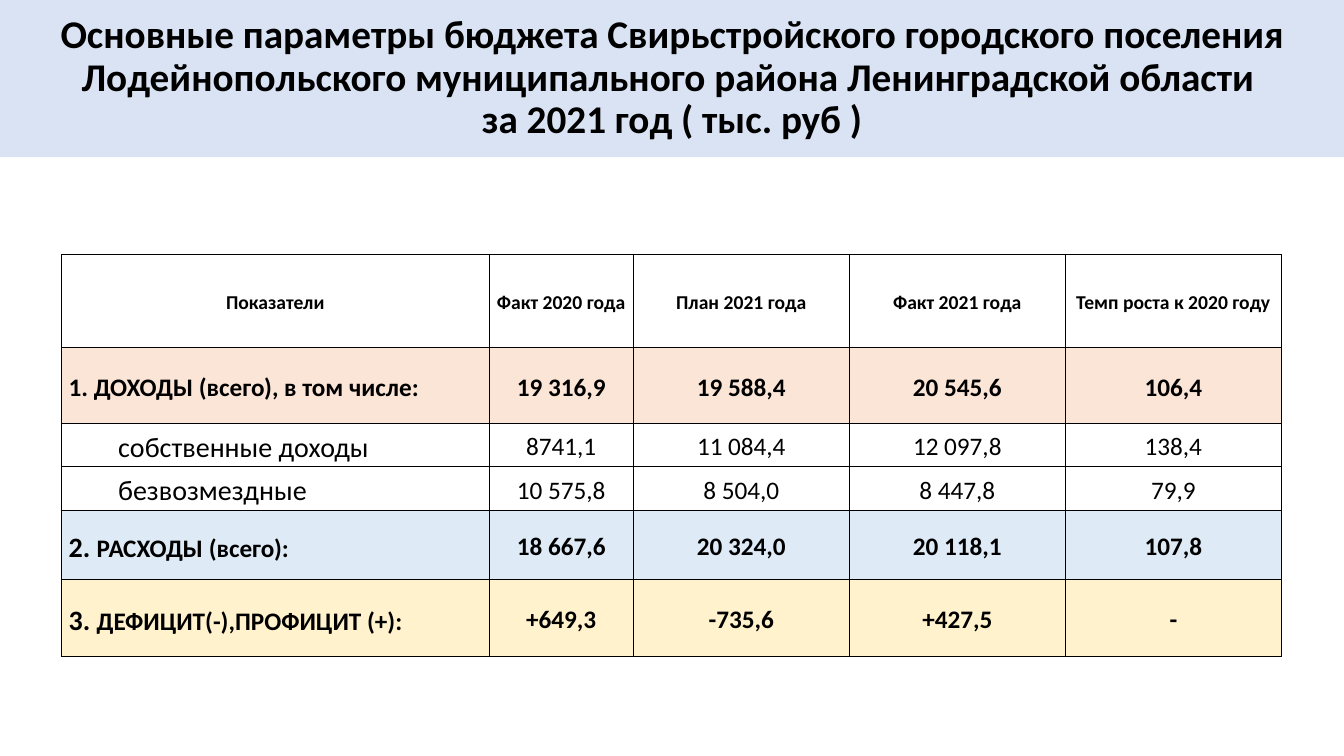
"""Build the slide with the main budget figures of a town settlement for 2021."""
from dataclasses import dataclass

from lxml import etree
from pptx import Presentation
from pptx.dml.color import RGBColor
from pptx.enum.text import MSO_ANCHOR, MSO_AUTO_SIZE, PP_ALIGN
from pptx.oxml.ns import qn
from pptx.slide import Slide
from pptx.table import _Cell
from pptx.text.text import _Paragraph, _Run
from pptx.util import Pt

CENTER, LEFT = PP_ALIGN.CENTER, PP_ALIGN.LEFT
MIDDLE = MSO_ANCHOR.MIDDLE
NO_AUTOFIT = MSO_AUTO_SIZE.NONE


@dataclass(frozen=True)
class Theme:
    font: str = "Calibri"
    text: str = "000000"
    border: str = "000000"
    banner: str = "DAE3F3"
    plain: str = "FFFFFF"
    income: str = "FBE5D6"
    expense: str = "DEEBF7"
    balance: str = "FFF2CC"
    title_size: float = 28
    header_size: float = 14
    value_size: float = 18
    label_size: float = 20


THEME = Theme()


@dataclass(frozen=True)
class BudgetRow:
    height: float
    label: str
    values: tuple[str, ...]
    fill: str = THEME.plain
    bold: bool = True
    number: str = ""
    label_size: float = THEME.value_size
    value_size: float = THEME.value_size
    label_align: PP_ALIGN = LEFT
    indent: float = 0


SLIDE_WIDTH, SLIDE_HEIGHT = 960, 540
BANNER_HEIGHT = 112.3
TABLE_LEFT, TABLE_TOP = 43.9, 182
COLUMN_WIDTHS = (305.5, 103, 154.3, 154.3, 154.3)
CELL_MARGIN = 5.1
LABEL_INDENT = 35.4
TITLE = (
    "Основные параметры бюджета Свирьстройского городского поселения "
    "Лодейнопольского муниципального района Ленинградской области \v"
    "за 2021 год ( тыс. руб )"
)
ROWS = (
    BudgetRow(66.2, "Показатели",
              ("Факт 2020 года", "План 2021 года", "Факт 2021 года", "Темп роста к 2020 году"),
              label_size=THEME.header_size, value_size=THEME.header_size, label_align=CENTER),
    BudgetRow(54.5, "1. ДОХОДЫ (всего), в том числе:",
              ("19 316,9", "19 588,4", "20 545,6", "106,4"), THEME.income),
    BudgetRow(30.4, "собственные доходы", ("8741,1", "11 084,4", "12 097,8", "138,4"),
              bold=False, label_size=THEME.label_size, indent=LABEL_INDENT),
    BudgetRow(31.7, "безвозмездные", ("10 575,8", "8 504,0", "8 447,8", "79,9"),
              bold=False, label_size=THEME.label_size, indent=LABEL_INDENT),
    BudgetRow(49, "РАСХОДЫ (всего):", ("18 667,6", "20 324,0", "20 118,1", "107,8"),
              THEME.expense, number="2. "),
    BudgetRow(55.4, "ДЕФИЦИТ(-),ПРОФИЦИТ (+):", ("+649,3", "-735,6", "+427,5", "-"),
              THEME.balance, number="3. "),
)


def format_run(run: _Run, size: float, bold: bool) -> None:
    run.font.name = THEME.font
    run.font.size = Pt(size)
    run.font.bold = bold
    run.font.color.rgb = RGBColor.from_string(THEME.text)


def draw_title(slide: Slide) -> None:
    title = slide.shapes.title
    title.left, title.top = Pt(0), Pt(0)
    title.width, title.height = Pt(SLIDE_WIDTH), Pt(BANNER_HEIGHT)
    title.fill.solid()
    title.fill.fore_color.rgb = RGBColor.from_string(THEME.banner)
    text_frame = title.text_frame
    text_frame.word_wrap = True
    text_frame.auto_size = NO_AUTOFIT
    text_frame.vertical_anchor = MIDDLE
    paragraph = text_frame.paragraphs[0]
    paragraph.text = TITLE
    paragraph.alignment = CENTER
    paragraph.line_spacing = 0.9
    for run in paragraph.runs:
        format_run(run, THEME.title_size, True)


def format_cell(cell: _Cell, fill: str) -> None:
    cell.margin_left = cell.margin_right = Pt(CELL_MARGIN)
    cell.margin_top = cell.margin_bottom = Pt(0)
    cell.vertical_anchor = MIDDLE
    properties = cell._tc.get_or_add_tcPr()
    for side in ("a:lnL", "a:lnR", "a:lnT", "a:lnB"):
        line = etree.SubElement(properties, qn(side), w=str(Pt(1)))
        line_fill = etree.SubElement(line, qn("a:solidFill"))
        etree.SubElement(line_fill, qn("a:srgbClr"), val=THEME.border)
    cell.fill.solid()
    cell.fill.fore_color.rgb = RGBColor.from_string(fill)


def write_cell(cell: _Cell, text: str, row: BudgetRow, size: float, align: PP_ALIGN) -> _Paragraph:
    format_cell(cell, row.fill)
    paragraph = cell.text_frame.paragraphs[0]
    paragraph.text = text
    paragraph.alignment = align
    paragraph.line_spacing = 1.15
    paragraph.space_after = Pt(10)
    format_run(paragraph.runs[0], size, row.bold)
    return paragraph


def write_label(cell: _Cell, row: BudgetRow) -> None:
    if row.number:
        paragraph = write_cell(cell, row.number, row, THEME.label_size, row.label_align)
        run = paragraph.add_run()
        run.text = row.label
        format_run(run, row.label_size, row.bold)
    else:
        paragraph = write_cell(cell, row.label, row, row.label_size, row.label_align)
    if row.indent:
        paragraph_properties = paragraph._p.get_or_add_pPr()
        paragraph_properties.set("marL", str(Pt(row.indent)))
        paragraph_properties.set("indent", "0")


def draw_table(slide: Slide) -> None:
    table = slide.shapes.add_table(
        len(ROWS), len(COLUMN_WIDTHS), Pt(TABLE_LEFT), Pt(TABLE_TOP),
        Pt(sum(COLUMN_WIDTHS)), Pt(sum(row.height for row in ROWS)),
    ).table
    table.first_row = False
    table.horz_banding = False
    for column, width in zip(table.columns, COLUMN_WIDTHS):
        column.width = Pt(width)
    for row_index, row in enumerate(ROWS):
        table.rows[row_index].height = Pt(row.height)
        write_label(table.cell(row_index, 0), row)
        for column_index, value in enumerate(row.values, start=1):
            write_cell(table.cell(row_index, column_index), value, row, row.value_size, CENTER)


def main() -> None:
    presentation = Presentation()
    presentation.slide_width = Pt(SLIDE_WIDTH)
    presentation.slide_height = Pt(SLIDE_HEIGHT)
    slide = presentation.slides.add_slide(presentation.slide_layouts.get_by_name("Title Only"))
    draw_title(slide)
    draw_table(slide)
    presentation.save("out.pptx")


if __name__ == "__main__":
    main()
